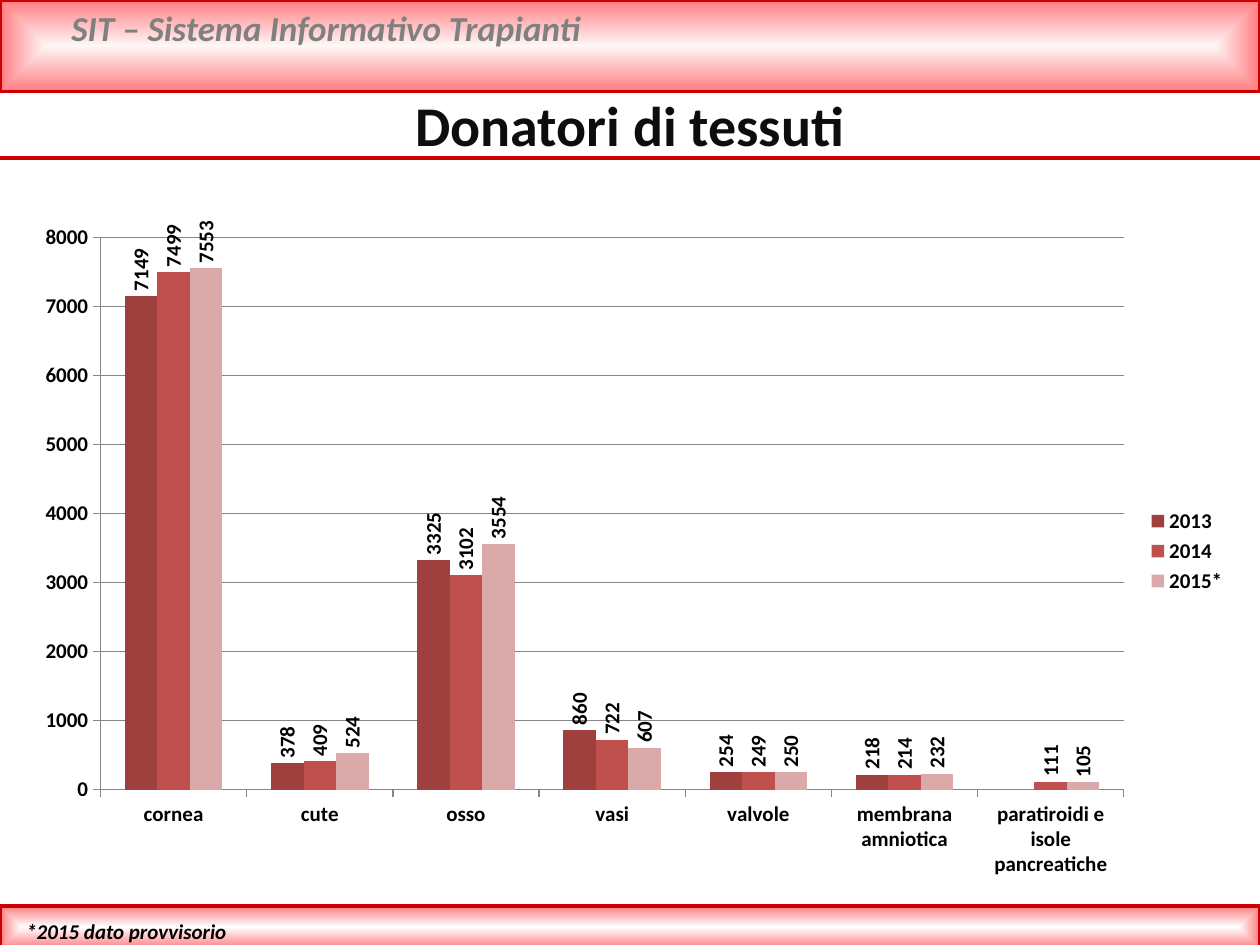
import pptx
import pptx.chart.data
import pptx.dml.color
import pptx.enum.chart
import pptx.enum.shapes
import pptx.enum.text
import pptx.oxml
import pptx.oxml.ns
import pptx.util

Cm = pptx.util.Cm
Pt = pptx.util.Pt
RGBColor = pptx.dml.color.RGBColor
Align = pptx.enum.text.PP_ALIGN

RED = RGBColor(0xCC, 0x00, 0x00)
PINK = RGBColor(0xFF, 0x7C, 0x80)
PALE = RGBColor(0xFF, 0xF6, 0xF6)
WHITE = RGBColor(0xFF, 0xFF, 0xFF)
BLACK = RGBColor(0x00, 0x00, 0x00)
INK = RGBColor(0x0D, 0x0D, 0x0D)
GRAY = RGBColor(0x80, 0x80, 0x80)
AXIS_GRAY = RGBColor(0x86, 0x86, 0x86)
SERIES_COLORS = [
    RGBColor(0x9E, 0x41, 0x3E),
    RGBColor(0xC0, 0x50, 0x4D),
    RGBColor(0xD9, 0xAA, 0xA9),
]

TISSUES = ["cornea", "cute", "osso", "vasi", "valvole",
           "membrana amniotica", "paratiroidi e isole pancreatiche"]
DONORS = {
    "2013": [7149, 378, 3325, 860, 254, 218, None],
    "2014": [7499, 409, 3102, 722, 249, 214, 111],
    "2015*": [7553, 524, 3554, 607, 250, 232, 105],
}


class SlideBuilder:
    font_name = "Calibri"
    line_width = Pt(2)

    def __init__(self, page):
        self.page = page

    def style_font(self, font, size, color=BLACK, italic=False):
        font.name = self.font_name
        font.size = Pt(size)
        font.bold = True
        font.italic = italic
        font.color.rgb = color

    def band(self, top, height, center_color):
        band = self.page.shapes.add_shape(
            pptx.enum.shapes.MSO_SHAPE.RECTANGLE, 0, Cm(top), Cm(25.4), Cm(height))
        band.shadow.inherit = False
        band.line.color.rgb = RED
        band.line.width = self.line_width
        band.fill.gradient()
        for stop, color in zip(band.fill.gradient_stops, (center_color, PINK)):
            stop.color.rgb = color
        gradient = band.element.spPr.find(pptx.oxml.ns.qn("a:gradFill"))
        gradient.remove(gradient.find(pptx.oxml.ns.qn("a:lin")))
        gradient.append(pptx.oxml.parse_xml(
            f'<a:path {pptx.oxml.ns.nsdecls("a")} path="shape">'
            '<a:fillToRect l="50000" t="50000" r="50000" b="50000"/></a:path>'))

    def rule(self, top):
        rule = self.page.shapes.add_connector(
            pptx.enum.shapes.MSO_CONNECTOR.STRAIGHT, 0, Cm(top), Cm(25.4), Cm(top))
        rule.line.color.rgb = RED
        rule.line.width = self.line_width
        rule.element.spPr.append(pptx.oxml.parse_xml(
            f'<a:effectLst {pptx.oxml.ns.nsdecls("a")}/>'))

    def text(self, words, left, top, width, height, size, color,
             align=Align.CENTER, italic=False):
        box = self.page.shapes.add_textbox(Cm(left), Cm(top), Cm(width), Cm(height))
        box.text_frame.word_wrap = True
        para = box.text_frame.paragraphs[0]
        para.text = words
        para.alignment = align
        self.style_font(para.font, size, color, italic)

    def style_axis(self, axis):
        self.style_font(axis.tick_labels.font, 12)
        axis.format.line.color.rgb = AXIS_GRAY
        axis.major_tick_mark = pptx.enum.chart.XL_TICK_MARK.OUTSIDE

    def column_chart(self, categories, columns, left, top, width, height):
        chart_data = pptx.chart.data.CategoryChartData()
        chart_data.categories = categories
        for name, values in columns.items():
            chart_data.add_series(name, values)
        chart = self.page.shapes.add_chart(
            pptx.enum.chart.XL_CHART_TYPE.COLUMN_CLUSTERED,
            Cm(left), Cm(top), Cm(width), Cm(height), chart_data).chart
        self.style_font(chart.font, 12)
        chart.has_title = False
        chart.has_legend = True
        chart.legend.position = pptx.enum.chart.XL_LEGEND_POSITION.RIGHT
        chart.legend.include_in_layout = False
        self.style_font(chart.legend.font, 12)

        self.style_axis(chart.category_axis)
        self.style_axis(chart.value_axis)
        chart.value_axis.minimum_scale = 0
        chart.value_axis.maximum_scale = 8000
        chart.value_axis.major_unit = 1000
        chart.value_axis.has_major_gridlines = True
        chart.value_axis.major_gridlines.format.line.color.rgb = AXIS_GRAY

        plot = chart.plots[0]
        plot.vary_by_categories = False
        plot.gap_width = 150
        plot.overlap = 0
        for series, color in zip(plot.series, SERIES_COLORS):
            series.format.fill.solid()
            series.format.fill.fore_color.rgb = color
            labels = series.data_labels
            labels.show_value = True
            labels.position = pptx.enum.chart.XL_LABEL_POSITION.OUTSIDE_END
            self.style_font(labels.font, 12)
        for body in chart.element.xpath(".//c:dLbls/c:txPr/a:bodyPr"):
            body.set("rot", "-5400000")
            body.set("vert", "horz")
        self.place_plot(chart, x=0.065, y=0.04, w=0.84, h=0.81)

    def place_plot(self, chart, **fractions):
        area = chart.element.xpath(".//c:plotArea")[0]
        for layout in area.findall(pptx.oxml.ns.qn("c:layout")):
            area.remove(layout)
        modes = "".join(f'<c:{side}Mode val="edge"/>' for side in "xy")
        sizes = "".join(f'<c:{side} val="{part}"/>' for side, part in fractions.items())
        area.insert(0, pptx.oxml.parse_xml(
            f'<c:layout {pptx.oxml.ns.nsdecls("c")}><c:manualLayout>'
            f'<c:layoutTarget val="inner"/>{modes}{sizes}'
            '</c:manualLayout></c:layout>'))


def main():
    deck = pptx.Presentation()
    deck.slide_width = Cm(25.4)
    deck.slide_height = Cm(19.05)
    builder = SlideBuilder(deck.slides.add_slide(deck.slide_layouts[6]))

    builder.band(0, 1.85, PALE)
    builder.text("SIT – Sistema Informativo Trapianti", 1.19, 0, 22.8, 1.12,
                 20, GRAY, Align.LEFT, italic=True)
    builder.band(18.26, 0.86, WHITE)
    builder.rule(3.18)
    builder.text("Donatori di tessuti", 0, 1.7, 25.4, 1.63, 32, INK)
    builder.column_chart(TISSUES, DONORS, 0.43, 4.24, 24.56, 13.74)
    builder.text("*2015 dato provvisorio", -1, 18.39, 7.1, 0.69,
                 12, BLACK, italic=True)
    deck.save("out.pptx")


if __name__ == "__main__":
    main()
